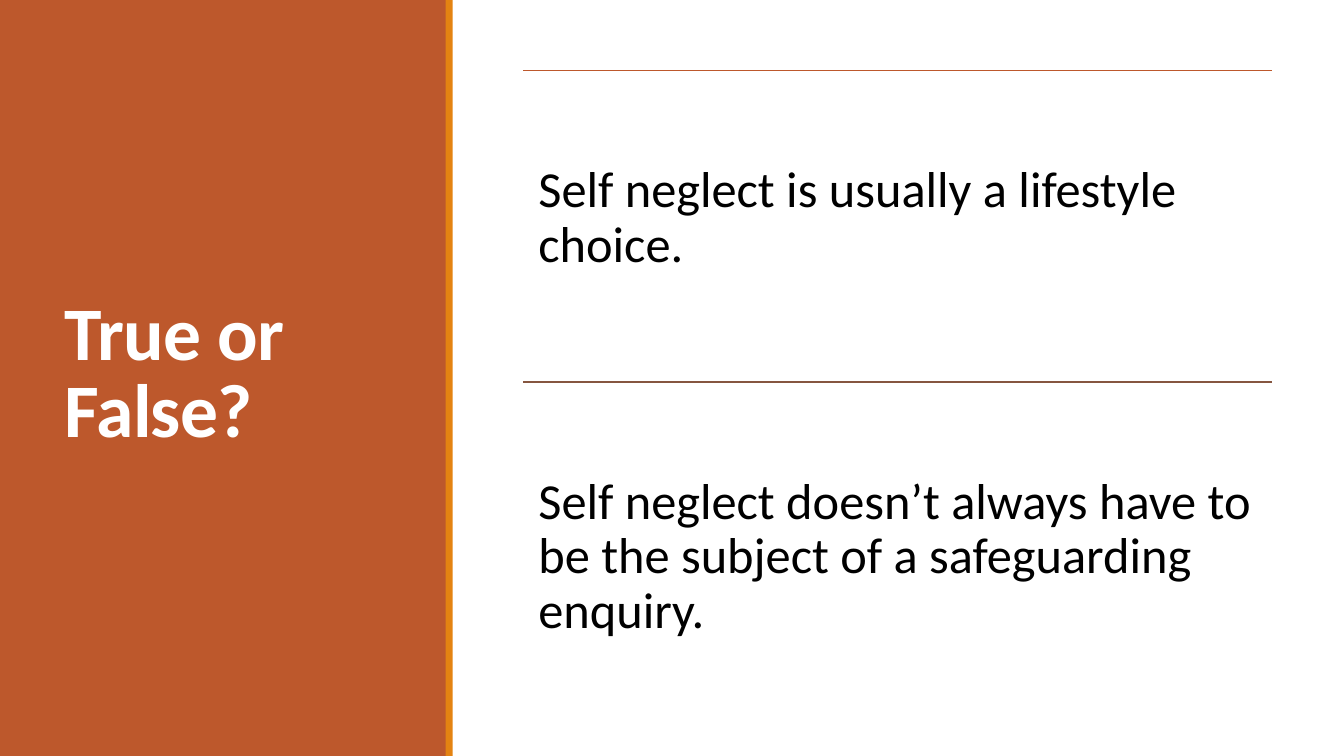
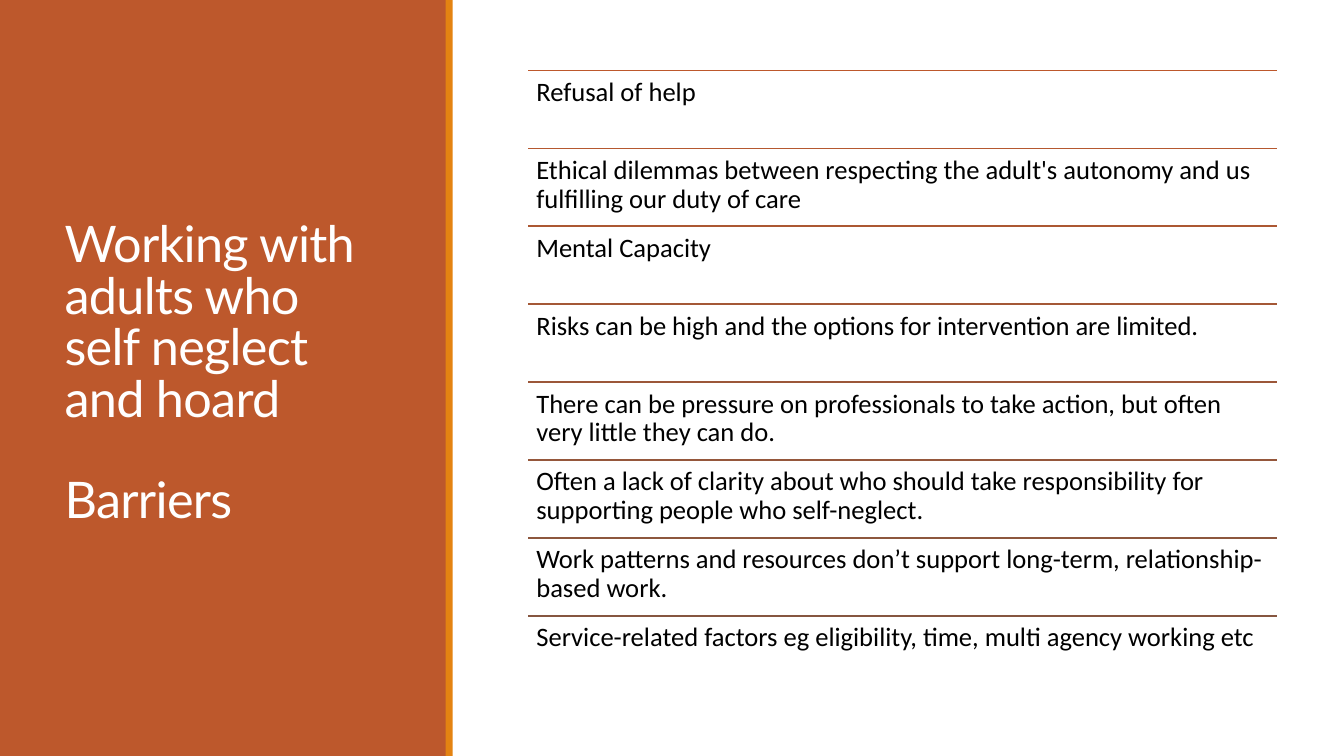
from lxml.etree import SubElement
from pptx import Presentation
from pptx.dml.color import RGBColor
from pptx.enum.shapes import MSO_CONNECTOR, MSO_SHAPE
from pptx.enum.text import MSO_ANCHOR, MSO_AUTO_SIZE, PP_ALIGN
from pptx.oxml.ns import qn
from pptx.util import Inches, Pt

WHITE = RGBColor(0xFF, 0xFF, 0xFF)
BLACK = RGBColor(0x00, 0x00, 0x00)
RUST = RGBColor(0xBD, 0x58, 0x2C)
ORANGE = RGBColor(0xE4, 0x83, 0x12)
BROWN = RGBColor(0x86, 0x56, 0x40)
RUST_TO_BROWN = [
    RUST,
    RGBColor(0xB5, 0x58, 0x2F),
    RGBColor(0xAC, 0x58, 0x33),
    RGBColor(0xA4, 0x58, 0x36),
    RGBColor(0x9C, 0x57, 0x39),
    RGBColor(0x95, 0x57, 0x3B),
    RGBColor(0x8D, 0x57, 0x3E),
    BROWN,
]

LIST_TOP = 0.7
LIST_WIDTH = 7.43
LIST_HEIGHT = 6.18

PAGES = [
    {
        "title": ["True or False?"],
        "title_font": ("Calibri", 54, True),
        "left": 5.19,
        "size": 36,
        "inset": 0.15,
        "top_inset": 0.93,
        "colours": [RUST, BROWN],
        "statements": [
            "Self neglect is usually a lifestyle choice.",
            "Self neglect doesn’t always have to be the subject of a safeguarding enquiry.",
        ],
    },
    {
        "title": ["Working with adults who self neglect and hoard", "Barriers"],
        "title_font": ("Lato", 36, False),
        "left": 5.24,
        "size": 19,
        "inset": 0.08,
        "top_inset": 0.08,
        "colours": RUST_TO_BROWN,
        "statements": [
            "Refusal of help",
            "Ethical dilemmas between respecting the adult's autonomy and us fulfilling our duty of care",
            "Mental Capacity",
            "Risks can be high and the options for intervention are limited.",
            "There can be pressure on professionals to take action, but often very little they can do.",
            "Often a lack of clarity about who should take responsibility for supporting people who self-neglect.",
            "Work patterns and resources don’t support long-term, relationship-based work.",
            "Service-related factors eg eligibility, time, multi agency working etc",
        ],
    },
]


def add_band(page, left, width, colour):
    band = page.shapes.add_shape(
        MSO_SHAPE.RECTANGLE, Inches(left), 0, Inches(width), Inches(7.5)
    )
    band.shadow.inherit = False
    band.fill.solid()
    band.fill.fore_color.rgb = colour
    band.line.fill.background()


def add_statement(page, content, top, height, colour, text):
    left, inset = content["left"], Inches(content["inset"])
    rule = page.shapes.add_connector(
        MSO_CONNECTOR.STRAIGHT,
        Inches(left), Inches(top), Inches(left + LIST_WIDTH), Inches(top),
    )
    rule.line.color.rgb = colour
    rule.line.width = Pt(1.25)
    SubElement(rule.element.spPr, qn("a:effectLst"))

    box = page.shapes.add_textbox(
        Inches(left), Inches(top), Inches(LIST_WIDTH), Inches(height)
    )
    frame = box.text_frame
    frame.word_wrap = True
    frame.margin_left = frame.margin_right = frame.margin_bottom = inset
    frame.margin_top = Inches(content["top_inset"])
    para = frame.paragraphs[0]
    para.text = text
    para.line_spacing = 0.9
    para.font.name = "Calibri"
    para.font.size = Pt(content["size"])
    para.font.color.rgb = BLACK


deck = Presentation()
deck.slide_width = Inches(13.33)
deck.slide_height = Inches(7.5)
layout = deck.slide_layouts.get_by_name("Title Only")

for content in PAGES:
    page = deck.slides.add_slide(layout)
    add_band(page, 0, 4.43, RUST)
    add_band(page, 4.42, 0.07, ORANGE)

    title = page.shapes.title
    title.element.getparent().append(title.element)
    title.left, title.top = Inches(0.54), Inches(0.57)
    title.width, title.height = Inches(3.37), Inches(6.31)
    frame = title.text_frame
    frame.text = "\n".join(content["title"])
    frame.word_wrap = True
    frame.auto_size = MSO_AUTO_SIZE.NONE
    frame.vertical_anchor = MSO_ANCHOR.MIDDLE
    name, size, bold = content["title_font"]
    for index, para in enumerate(frame.paragraphs):
        para.alignment = PP_ALIGN.LEFT
        para.line_spacing = 0.85
        para.space_before = Pt(size if index else 0)
        para.font.name = name
        para.font.size = Pt(size)
        para.font.bold = bold
        para.font.color.rgb = WHITE
    for properties in title.element.iter(qn("a:defRPr")):
        properties.set("spc", "-50")

    row_height = LIST_HEIGHT / len(content["statements"])
    rows = zip(content["colours"], content["statements"])
    for index, (colour, text) in enumerate(rows):
        top = LIST_TOP + index * row_height
        add_statement(page, content, top, row_height, colour, text)

deck.save("out.pptx")
